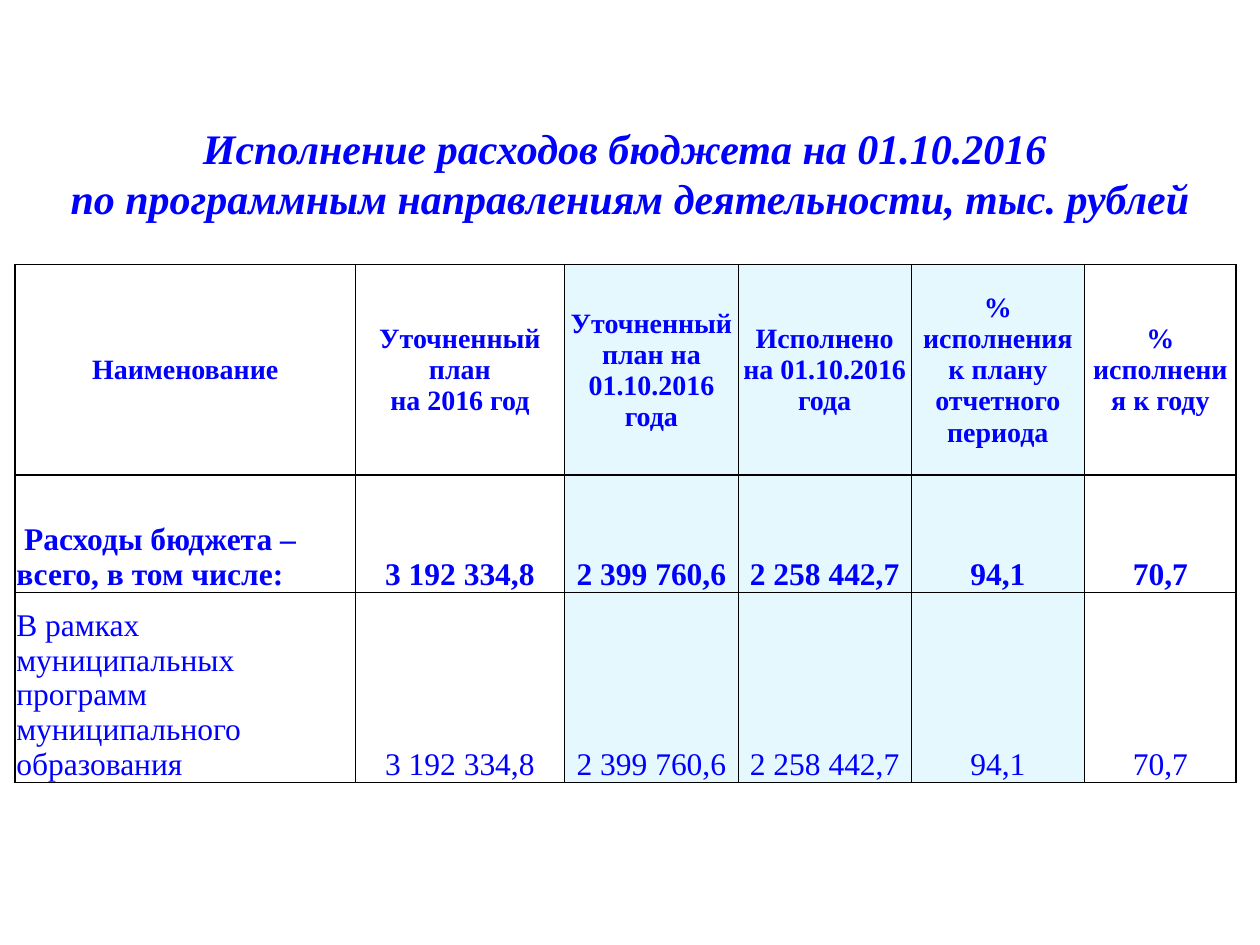
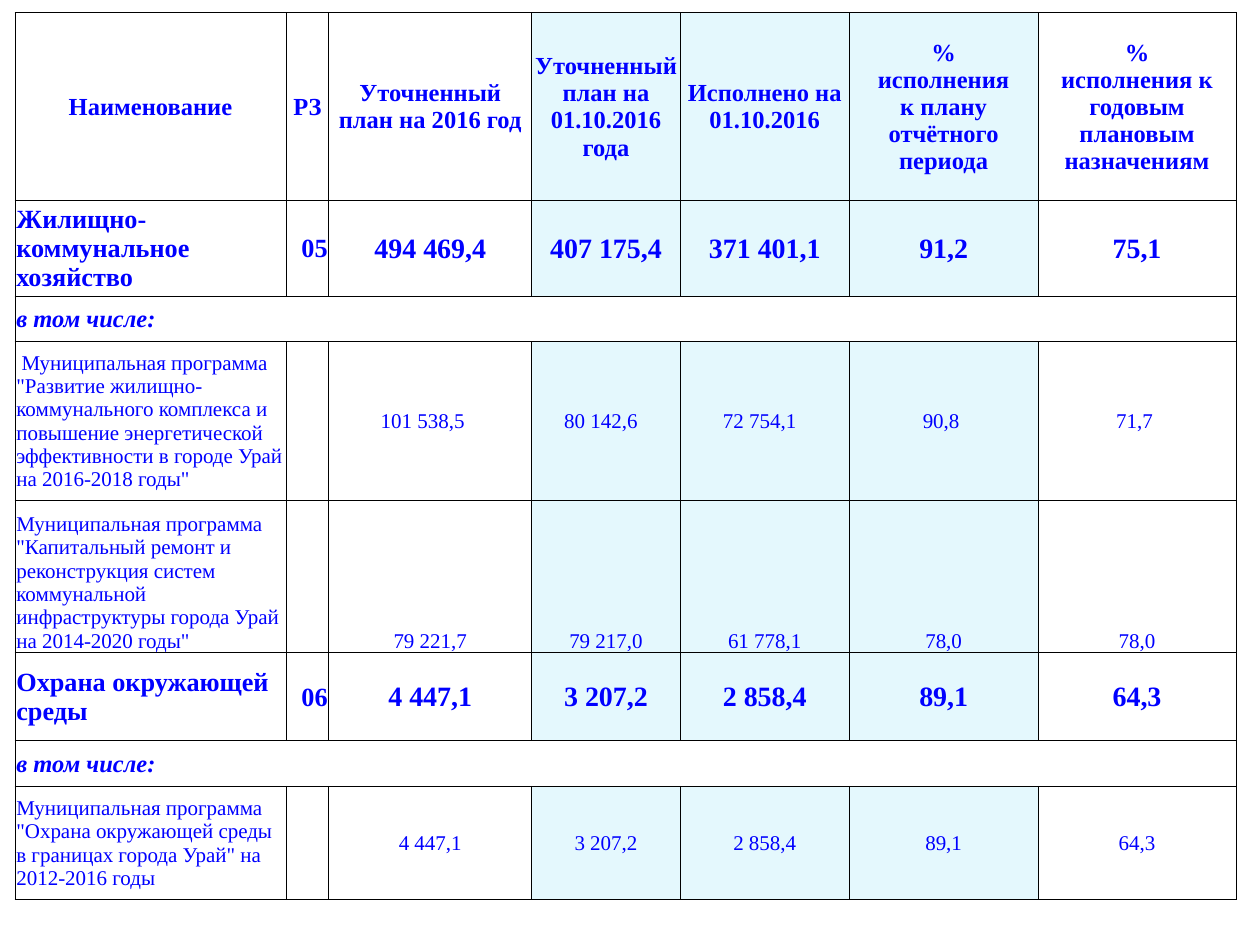
import pptx
import pptx.util
import pptx.dml.color
import pptx.enum.text
import pptx.oxml.ns
from dataclasses import dataclass
from lxml import etree

Inches, Pt = pptx.util.Inches, pptx.util.Pt
ALIGN, ANCHOR = pptx.enum.text.PP_ALIGN, pptx.enum.text.MSO_ANCHOR
COLORS = {"text": "0000FF", "plain": "FFFFFF", "period": "E4F8FD", "border": "000000"}
FONT = "Times New Roman"


@dataclass
class Row:
    height: float
    texts: list
    name_size: int
    value_size: int
    bold: bool = False
    italic: bool = False
    anchor: object = ANCHOR.MIDDLE
    header: bool = False
    shifts: tuple = ()  # extra right inset per column, inches


def rgb(name):
    return pptx.dml.color.RGBColor.from_string(COLORS[name])


def write_text(frame, text, size, align, bold=False, italic=False):
    """Start a paragraph at each newline."""
    for number, line in enumerate(text.split("\n")):
        para = frame.add_paragraph() if number else frame.paragraphs[0]
        para.alignment = align
        span = para.add_run()
        span.text = line
        span.font.name, span.font.size = FONT, Pt(size)
        span.font.bold, span.font.italic = bold, italic
        span.font.color.rgb = rgb("text")


def add_border(cell, side, width):
    qn = pptx.oxml.ns.qn
    line = etree.SubElement(cell._tc.get_or_add_tcPr(), qn("a:ln" + side), w=str(Pt(width)))
    fill = etree.SubElement(line, qn("a:solidFill"))
    etree.SubElement(fill, qn("a:srgbClr"), val=COLORS["border"])


def add_title(page, box, text):
    shape = page.shapes.add_textbox(*map(Inches, box))
    shape.text_frame.word_wrap = True
    write_text(shape.text_frame, text, 24, ALIGN.CENTER, bold=True, italic=True)


def fill_cell(cell, row, column, code_column):
    cell.margin_left = cell.margin_top = Inches(0.01)
    shift = row.shifts[column] if row.shifts else 0
    cell.margin_right, cell.margin_bottom = Inches(0.01 + shift), 0
    cell.vertical_anchor = row.anchor
    align = ALIGN.CENTER
    if not row.header:
        align = {0: ALIGN.LEFT, code_column: ALIGN.RIGHT}.get(column, ALIGN.CENTER)
    size = row.name_size if column in (0, code_column) else row.value_size
    if row.texts[column]:
        write_text(cell.text_frame, row.texts[column], size, align, row.bold, row.italic)


def add_budget_table(page, left, top, widths, rows, period_columns, code_column=None,
                     heavy_columns=(), heavy_rows=()):
    """Rows with a single text span the table; heavy edges are drawn at 1 pt."""
    height = sum(row.height for row in rows)
    frame = page.shapes.add_table(len(rows), len(widths), Inches(left), Inches(top),
                                  Inches(sum(widths)), Inches(height))
    table = frame.table
    table.first_row = table.horz_banding = False
    for column, width in enumerate(widths):
        table.columns[column].width = Inches(width)
    for r, row in enumerate(rows):
        table.rows[r].height = Inches(row.height)
        spanning = len(row.texts) == 1
        if spanning:
            table.cell(r, 0).merge(table.cell(r, len(widths) - 1))
        for c in range(len(widths)):
            cell = table.cell(r, c)
            edges = (("L", c, heavy_columns), ("R", c + 1, heavy_columns),
                     ("T", r, heavy_rows), ("B", r + 1, heavy_rows))
            for side, edge, heavy in edges:
                add_border(cell, side, 1 if edge in heavy else 0.5)
            cell.fill.solid()
            in_period = c in period_columns and not spanning
            cell.fill.fore_color.rgb = rgb("period" if in_period else "plain")
            if c < len(row.texts):
                fill_cell(cell, row, c, code_column)


def build_summary(page):
    add_title(page, (0, 0.92, 10, 0.91),
              "Исполнение расходов бюджета на 01.10.2016 \n"
              "по программным направлениям деятельности, тыс. рублей")
    totals = ["3 192 334,8", "2 399 760,6", "2 258 442,7", "94,1", "70,7"]
    rows = [
        Row(1.67, ["Наименование", "Уточненный\nплан\nна 2016 год",
                   "Уточненный план на 01.10.2016 года", "Исполнено на 01.10.2016 года",
                   "%\nисполнения к плану отчетного периода", "% исполнения к году"],
            16, 16, bold=True, header=True),
        Row(0.93, [" Расходы бюджета –всего, в том числе:"] + totals,
            18, 18, bold=True, anchor=ANCHOR.BOTTOM),
        Row(1.51, ["В рамках муниципальных программ муниципального образования"] + totals,
            18, 18, anchor=ANCHOR.BOTTOM),
    ]
    add_budget_table(page, 0.12, 2.1, [2.7, 1.66, 1.38, 1.37, 1.38, 1.2], rows, (2, 3, 4),
                     heavy_columns=(0, 1, 3, 6), heavy_rows=(0, 1, 3))


def section_row(height, *texts):
    return Row(height, list(texts), 15, 16, bold=True)


def including_row():
    return Row(0.36, ["в том числе:"], 14, 14, bold=True, italic=True)


def program_row(height, name, *values, **options):
    return Row(height, [name, "", *values], 12, 12, **options)


def build_sections(page):
    rows = [
        Row(1.49, ["Наименование", "РЗ", "Уточненный план на 2016 год",
                   "Уточненный план на 01.10.2016 года", "Исполнено на 01.10.2016",
                   "%\nисполнения\nк плану отчётного периода",
                   "%\nисполнения к годовым плановым назначениям"],
            14, 14, bold=True, header=True),
        section_row(0.74, "Жилищно-коммунальное хозяйство", "05",
                    "494 469,4", "407 175,4", "371 401,1", "91,2", "75,1"),
        including_row(),
        program_row(1.26, ' Муниципальная программа "Развитие жилищно-коммунального комплекса '
                    'и повышение энергетической эффективности в городе Урай на 2016-2018 годы"',
                    "101 538,5", "80 142,6", "72 754,1", "90,8", "71,7",
                    shifts=(0, 0, 0.12, 0.08, 0.08, 0.04, 0.04)),
        program_row(1.18, 'Муниципальная программа "Капитальный ремонт и реконструкция систем '
                    'коммунальной инфраструктуры города Урай на 2014-2020 годы"',
                    "79 221,7", "79 217,0", "61 778,1", "78,0", "78,0", anchor=ANCHOR.BOTTOM),
        section_row(0.7, "Охрана окружающей среды", "06",
                    "4 447,1", "3 207,2", "2 858,4", "89,1", "64,3"),
        including_row(),
        program_row(0.9, 'Муниципальная программа "Охрана окружающей среды в границах '
                    'города Урай" на 2012-2016 годы',
                    "4 447,1", "3 207,2", "2 858,4", "89,1", "64,3"),
    ]
    add_budget_table(page, 0.12, 0.1, [2.15, 0.34, 1.61, 1.18, 1.34, 1.5, 1.57], rows,
                     (3, 4, 5), code_column=1)


def main():
    deck = pptx.Presentation()
    deck.slide_width, deck.slide_height = Inches(10), Inches(7.5)
    for build in (build_summary, build_sections):
        build(deck.slides.add_slide(deck.slide_layouts[6]))
    deck.save("out.pptx")


if __name__ == "__main__":
    main()
